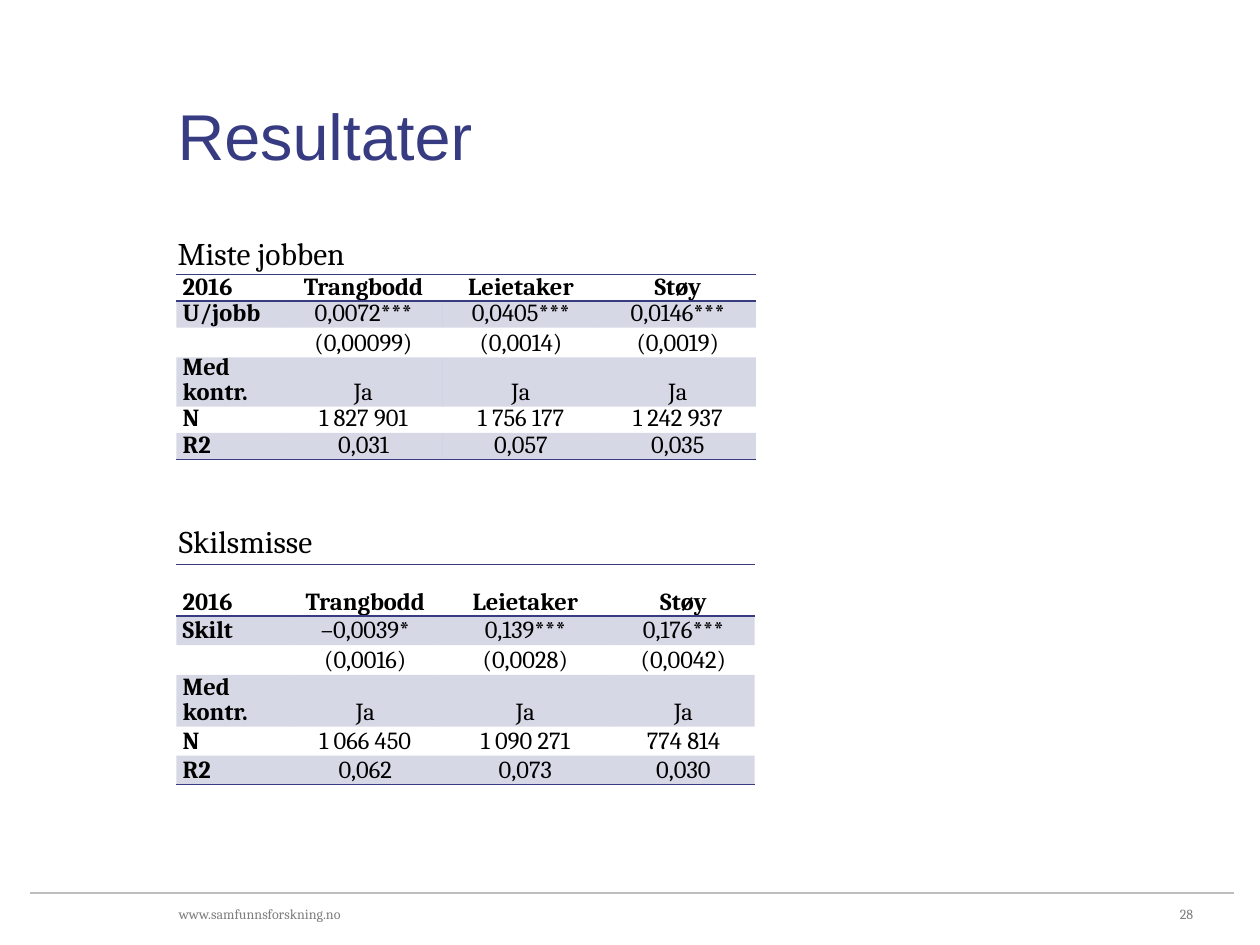
"""Build the results slide with two regression tables."""
from dataclasses import dataclass

from lxml import etree
from pptx import Presentation
from pptx import util as u
from pptx.dml.color import RGBColor
from pptx.enum import shapes, text
from pptx.oxml import ns

NAVY = RGBColor(0x37, 0x3C, 0x82)
BLACK = RGBColor(0x00, 0x00, 0x00)
GREY = RGBColor(0x7F, 0x7F, 0x7F)
RULE_GREY = RGBColor(0xBE, 0xBE, 0xBE)

SLIDE_WIDTH, SLIDE_HEIGHT = u.Inches(10), u.Inches(7.5)
COLUMN, ROW = SLIDE_WIDTH / 100, SLIDE_HEIGHT / 75
PLAIN_STYLE = "{2D5ABB26-0587-4C30-8999-92F81FD0307C}"
BAND_ALPHA = "20000"
FOOTER_ROW = 71.9
ALIGN = text.PP_ALIGN
ANCHOR = text.MSO_ANCHOR


@dataclass
class Label:
    """A line of text placed on the grid."""

    words: str
    column: float
    row: float
    columns: float
    rows: float
    size: int
    color: RGBColor = BLACK
    face: str = "Cambria"
    anchor: ANCHOR = ANCHOR.TOP
    align: ALIGN = ALIGN.LEFT


@dataclass
class Results:
    """A regression table placed on the grid."""

    row: float
    widths: list[float]
    heights: list[float]
    stub_align: ALIGN
    cells: list[list[str]]


LABELS = [
    Label("Resultater", 14.1, 7.5, 80.7, 6.3, 37, NAVY, "Arial", ANCHOR.BOTTOM),
    Label("Miste jobben", 14.1, 18.6, 37.5, 3.1, 18),
    Label("Skilsmisse", 14.2, 41.4, 37.5, 3.1, 18),
    Label("www.samfunnsforskning.no", 14.2, FOOTER_ROW, 23.6, 1.3, 8, GREY,
          anchor=ANCHOR.MIDDLE),
    Label("28", 86.5, FOOTER_ROW, 8.2, 1.3, 8, GREY,
          anchor=ANCHOR.MIDDLE, align=ALIGN.RIGHT),
]

HEADER = ["2016", "Trangbodd", "Leietaker", "Støy"]
CONTROLS = ["Med kontr.", "Ja", "Ja", "Ja"]

TABLES = [
    Results(21.8, [8.6, 12.5, 12.5, 12.4], [2.1, 2.1, 2.3, 3.9, 2.1, 2.1], ALIGN.LEFT, [
        HEADER,
        ["U/jobb", "0,0072***", "0,0405***", "0,0146***"],
        ["", "(0,00099)", "(0,0014)", "(0,0019)"],
        CONTROLS,
        ["N", "1 827 901", "1 756 177", "1 242 937"],
        ["R2", "0,031", "0,057", "0,035"],
    ]),
    Results(44.8, [9.2, 11.6, 13.8, 11.3], [4.1, 2.3, 2.3, 4.1, 2.3, 2.3], ALIGN.JUSTIFY, [
        HEADER,
        ["Skilt", "–0,0039*", "0,139***", "0,176***"],
        ["", "(0,0016)", "(0,0028)", "(0,0042)"],
        CONTROLS,
        ["N", "1 066 450", "1 090 271", "774 814"],
        ["R2", "0,062", "0,073", "0,030"],
    ]),
]


def apply(target, values: dict) -> None:
    """Set every attribute in the dict on the target."""
    for key, value in values.items():
        setattr(target, key, value)


def grid(column: float, row: float) -> tuple[int, int]:
    """Turn a grid place into slide lengths."""
    return round(column * COLUMN), round(row * ROW)


def draw_label(slide, label: Label) -> None:
    """Draw one text box."""
    box = slide.shapes.add_textbox(*grid(label.column, label.row),
                                   *grid(label.columns, label.rows))
    apply(box.text_frame, dict(word_wrap=True, vertical_anchor=label.anchor, margin_left=0,
                               margin_right=0, margin_top=0, margin_bottom=0))
    paragraph = box.text_frame.paragraphs[0]
    paragraph.alignment = label.align
    run = paragraph.add_run()
    run.text = label.words
    apply(run.font, dict(size=u.Pt(label.size), name=label.face))
    run.font.color.rgb = label.color


def draw_rule(slide) -> None:
    """Draw the line above the footer."""
    rule = slide.shapes.add_connector(shapes.MSO_CONNECTOR.STRAIGHT,
                                      *grid(2.4, 70.9), *grid(97.9, 70.9))
    rule.line.color.rgb = RULE_GREY
    rule.line.width = u.Pt(1)
    etree.SubElement(rule._element.spPr, ns.qn("a:effectLst"))


def add_border(cell, side: str) -> None:
    """Give one side of a cell a navy line."""
    line = etree.Element(ns.qn(f"a:ln{side}"), w=str(u.Pt(1)))
    fill = etree.SubElement(line, ns.qn("a:solidFill"))
    etree.SubElement(fill, ns.qn("a:srgbClr"), val=str(NAVY))
    cell._tc.get_or_add_tcPr().insert(0, line)


def shade(cell, banded: bool) -> None:
    """Fill a banded cell with pale navy and leave others clear."""
    if not banded:
        cell.fill.background()
        return
    cell.fill.solid()
    cell.fill.fore_color.rgb = NAVY
    color = cell._tc.tcPr.find(".//" + ns.qn("a:srgbClr"))
    etree.SubElement(color, ns.qn("a:alpha"), val=BAND_ALPHA)


def write_cell(cell, words: str, bold: bool, align: ALIGN) -> None:
    """Write one table entry."""
    apply(cell, dict(vertical_anchor=ANCHOR.BOTTOM, margin_left=u.Inches(0.05),
                     margin_right=u.Inches(0.05), margin_top=0, margin_bottom=0))
    paragraph = cell.text_frame.paragraphs[0]
    apply(paragraph, dict(alignment=align, line_spacing=u.Pt(14)))
    if not words:
        paragraph._p.get_or_add_endParaRPr().set("sz", "1400")
        return
    run = paragraph.add_run()
    run.text = words
    apply(run.font, dict(size=u.Pt(14), name="Cambria", bold=bold))
    run.font.color.rgb = BLACK


def draw_results(slide, results: Results) -> None:
    """Draw one regression table."""
    last = len(results.cells) - 1
    frame = slide.shapes.add_table(len(results.heights), len(results.widths),
                                   *grid(14, results.row),
                                   *grid(sum(results.widths), sum(results.heights)))
    table = frame.table
    apply(table, dict(first_row=False, horz_banding=False))
    table._tbl.tblPr.find(ns.qn("a:tableStyleId")).text = PLAIN_STYLE
    for column, width in zip(table.columns, results.widths):
        column.width = round(width * COLUMN)
    for row, height in zip(table.rows, results.heights):
        row.height = round(height * ROW)
    for r, entries in enumerate(results.cells):
        for c, words in enumerate(entries):
            cell = table.cell(r, c)
            write_cell(cell, words, r == 0 or c == 0,
                       ALIGN.CENTER if c else results.stub_align)
            shade(cell, r % 2 == 1)
            if r in (0, last):
                add_border(cell, "B")
            if r == 0:
                add_border(cell, "T")


def main() -> None:
    """Build and save the slide."""
    deck = Presentation()
    apply(deck, dict(slide_width=SLIDE_WIDTH, slide_height=SLIDE_HEIGHT))
    slide = deck.slides.add_slide(deck.slide_layouts[6])
    draw_rule(slide)
    for results in TABLES:
        draw_results(slide, results)
    for label in LABELS:
        draw_label(slide, label)
    deck.save("out.pptx")


if __name__ == "__main__":
    main()
